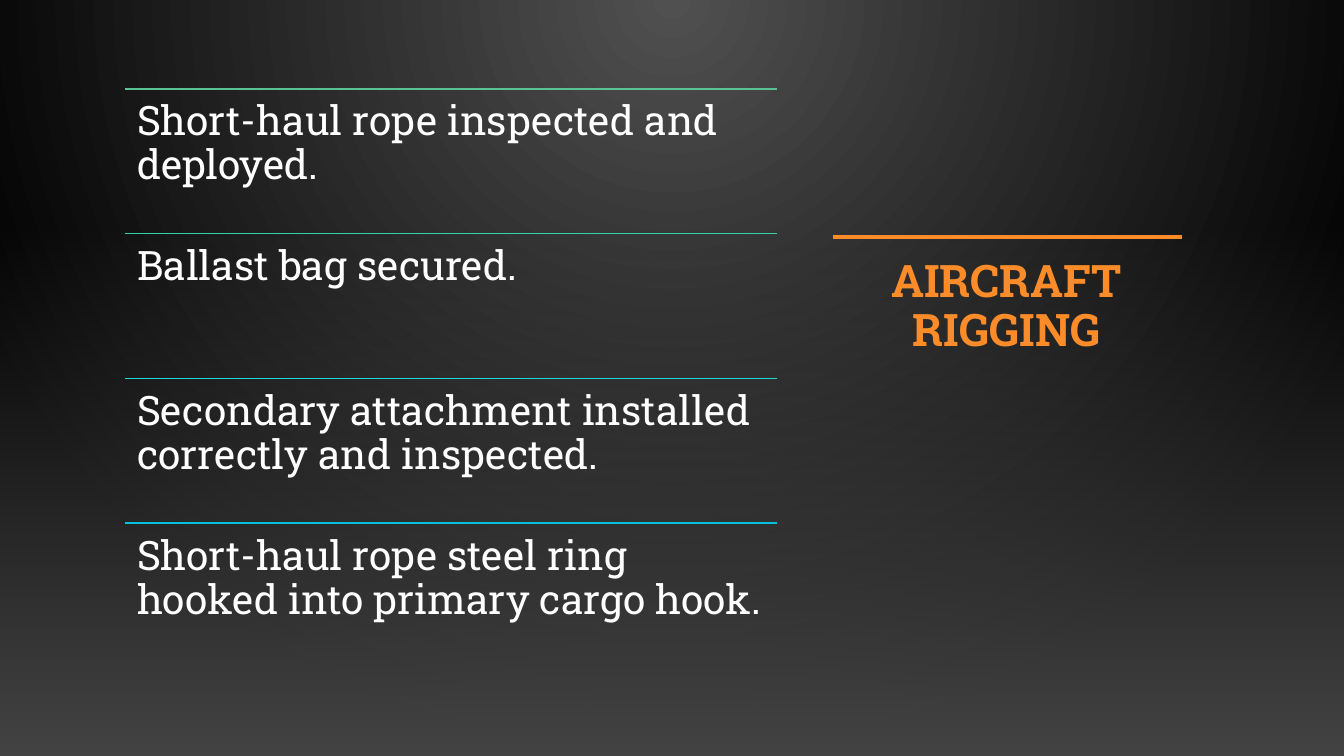
from pptx import Presentation
from pptx.dml.color import RGBColor
from pptx.enum.shapes import MSO_CONNECTOR, MSO_SHAPE
from pptx.enum.text import MSO_ANCHOR, PP_ALIGN
from pptx.oxml import parse_xml
from pptx.oxml.ns import nsdecls, qn
from pptx.util import Inches, Pt

STRAIGHT = MSO_CONNECTOR.STRAIGHT
RECTANGLE = MSO_SHAPE.RECTANGLE
TOP = MSO_ANCHOR.TOP
LEFT, CENTER = PP_ALIGN.LEFT, PP_ALIGN.CENTER

WIDTH, HEIGHT = 13.33, 7.5
ORANGE, WHITE = "FB8C29", "FFFFFF"
SPOTLIGHT = ('<a:path path="circle">'
             '<a:fillToRect l="43000" t="0" r="43000" b="100000"/></a:path>')
DOWNWARD = '<a:lin ang="5400000" scaled="0"/>'

STEPS = [
    ("Short-haul rope inspected and deployed.", "57C293"),
    ("Ballast bag secured.", "36D1AB"),
    ("Secondary attachment installed correctly and inspected.", "1ADCD2"),
    ("Short-haul rope steel ring hooked into primary cargo hook.", "06BFDE"),
]
STEP_LEFT, STEP_TOP, STEP_WIDTH, STEP_PITCH = 1.24, 0.88, 6.47, 1.4375


def color(value):
    return RGBColor.from_string(value)


def set_gradient(element, start, end, direction, start_alpha=100):
    """Replace the first empty fill in element with a two-stop gradient."""
    gradient = parse_xml(
        f'<a:gradFill {nsdecls("a")} rotWithShape="1"><a:gsLst>'
        f'<a:gs pos="0"><a:srgbClr val="{start}">'
        f'<a:alpha val="{start_alpha * 1000}"/></a:srgbClr></a:gs>'
        f'<a:gs pos="100000"><a:srgbClr val="{end}"/></a:gs>'
        f'</a:gsLst>{direction}</a:gradFill>')
    empty_fill = next(element.iter(qn("a:noFill")))
    empty_fill.getparent().replace(empty_fill, gradient)


class SlideBuilder:
    """Draws styled elements on one slide."""

    font = "Roboto Slab"
    line_spacing = 0.9

    def __init__(self, slide):
        self.slide = slide

    def background(self, *gradient):
        self.slide.background.fill.background()
        set_gradient(self.slide.element, *gradient)

    def panel(self, top, *gradient):
        """Add a full-width gradient rectangle from top to the slide's foot."""
        panel = self.slide.shapes.add_shape(
            RECTANGLE, 0, Inches(top), Inches(WIDTH), Inches(HEIGHT - top))
        panel.shadow.inherit = False
        panel.fill.background()
        panel.line.fill.background()
        set_gradient(panel.element, *gradient)

    def rule(self, left, top, width, line_color, weight):
        rule = self.slide.shapes.add_connector(
            STRAIGHT, Inches(left), Inches(top), Inches(left + width), Inches(top))
        rule.line.color.rgb = color(line_color)
        rule.line.width = Pt(weight)
        rule.element.spPr.append(parse_xml(f'<a:effectLst {nsdecls("a")}/>'))

    def text(self, words, left, top, width, height, size, text_color,
             inset_x, inset_y, align=LEFT, bold=False):
        box = self.slide.shapes.add_textbox(
            Inches(left), Inches(top), Inches(width), Inches(height))
        frame = box.text_frame
        frame.word_wrap = True
        frame.vertical_anchor = TOP
        frame.margin_left = frame.margin_right = Inches(inset_x)
        frame.margin_top = frame.margin_bottom = Inches(inset_y)
        frame.text = words
        para = frame.paragraphs[0]
        para.alignment = align
        para.line_spacing = self.line_spacing
        span = para.runs[0]
        span.font.name = self.font
        span.font.size = Pt(size)
        span.font.bold = bold
        span.font.color.rgb = color(text_color)


def main():
    deck = Presentation()
    deck.slide_width, deck.slide_height = Inches(WIDTH), Inches(HEIGHT)
    page = SlideBuilder(deck.slides.add_slide(deck.slide_layouts[6]))

    page.background("505050", "000000", SPOTLIGHT)
    page.panel(0, "505050", "000000", SPOTLIGHT)
    page.panel(2.21, "454545", "454545", DOWNWARD, 0)

    page.text("AIRCRAFT RIGGING", 8.26, 2.52, 3.45, 4.1, 32, ORANGE,
              0.1, 0.05, CENTER, True)
    page.rule(8.26, 2.35, 3.46, ORANGE, 2.5)

    for index, (words, line_color) in enumerate(STEPS):
        top = STEP_TOP + index * STEP_PITCH
        page.rule(STEP_LEFT, top, STEP_WIDTH, line_color, 1.25)
        page.text(words, STEP_LEFT, top, STEP_WIDTH, STEP_PITCH, 29, WHITE,
                  0.12, 0.12)

    deck.save("out.pptx")


if __name__ == "__main__":
    main()
